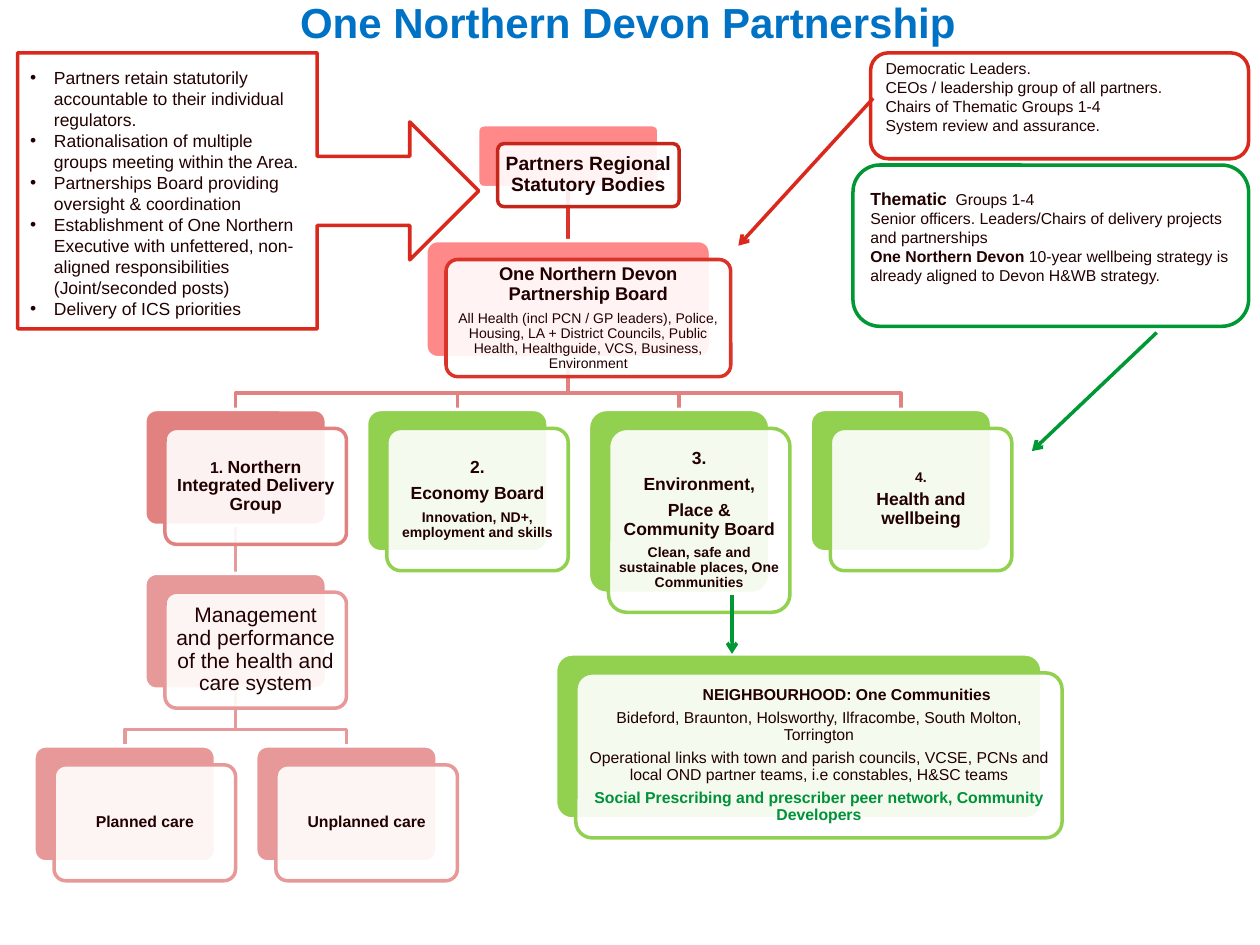
from dataclasses import dataclass

import pptx
import pptx.dml.color
import pptx.enum.shapes
import pptx.enum.text
import pptx.oxml
import pptx.oxml.ns
import pptx.util

Inches = pptx.util.Inches
Pt = pptx.util.Pt
RGBColor = pptx.dml.color.RGBColor
MSO_SHAPE = pptx.enum.shapes.MSO_SHAPE
PP_ALIGN = pptx.enum.text.PP_ALIGN
MSO_ANCHOR = pptx.enum.text.MSO_ANCHOR

INK = RGBColor(0x23, 0x00, 0x00)
WHITE = RGBColor(0xFF, 0xFF, 0xFF)
TITLE_BLUE = RGBColor(0x00, 0x72, 0xC6)
RED = RGBColor(0xDA, 0x29, 0x1C)
DEEP_RED = RGBColor(0xC6, 0x25, 0x19)
BOARD_RED = RGBColor(0xDA, 0x33, 0x2A)
PINK = RGBColor(0xFF, 0x88, 0x88)
ROSE = RGBColor(0xE2, 0x82, 0x80)
PALE_ROSE = RGBColor(0xE6, 0x99, 0x98)
LIME = RGBColor(0x92, 0xD0, 0x50)
GREEN = RGBColor(0x00, 0x98, 0x34)
TEXT_GREEN = RGBColor(0x00, 0x91, 0x39)

CARD_OFFSET = 0.16
CARD_WIDTH = 1.44
COLUMN_STEP = 1.76


@dataclass
class Line:
    """One paragraph, with an optional bold lead run."""
    text: str
    size: float
    bold: bool = False
    color: RGBColor = INK
    lead: str = ""
    lead_size: float = 9
    margin: float = 0


def add_xml(parent, tag, **attributes):
    """Append a drawing element to a parent and return it."""
    child = pptx.oxml.parse_xml(f"<a:{tag} {pptx.oxml.ns.nsdecls('a')}/>")
    for name, value in attributes.items():
        child.set(name, value)
    parent.append(child)
    return child


def write_lines(frame, lines, align=PP_ALIGN.LEFT, compact=False, bullet=None):
    """Fill a text frame with paragraphs."""
    frame.word_wrap = True
    for number, line in enumerate(lines):
        para = frame.add_paragraph() if number else frame.paragraphs[0]
        para.alignment = align
        para.font.name, para.font.size = "Arial", Pt(line.size)
        para.font.bold, para.font.color.rgb = line.bold, line.color
        if line.lead:
            span = para.add_run()
            span.text = line.lead
            span.font.size, span.font.bold = Pt(line.lead_size), True
        para.add_run().text = line.text
        properties = para._p.get_or_add_pPr()
        if compact:
            para.line_spacing = 0.9
            para.space_after = Pt(round(line.size * 0.38, 1))
        if line.margin:
            properties.set("marL", str(Inches(line.margin)))
        if bullet:
            properties.set("marL", str(Inches(0.19)))
            properties.set("indent", str(-Inches(0.19)))
            defaults = properties.find(pptx.oxml.ns.qn("a:defRPr"))
            defaults.addprevious(add_xml(properties, "buFont", typeface="Arial"))
            defaults.addprevious(add_xml(properties, "buChar", char=bullet))


def add_panel(page, kind, box, line_color, fill=None):
    """Add an outlined preset shape, filled or hollow."""
    shape = page.shapes.add_shape(kind, *map(Inches, box))
    shape.shadow.inherit = False
    if fill is None:
        shape.fill.background()
    else:
        shape.fill.solid()
        shape.fill.fore_color.rgb = fill
    shape.line.color.rgb, shape.line.width = line_color, Pt(2)
    return shape


def add_text(page, box, lines, **options):
    """Add a wrapped text box."""
    frame = page.shapes.add_textbox(*map(Inches, box)).text_frame
    write_lines(frame, lines, **options)


def add_card(page, box, fill, lines, inset=0.04, edge=None):
    """Add a coloured card with an offset translucent text card; return the coloured one."""
    left, top, width, height = box
    back = add_panel(page, MSO_SHAPE.ROUNDED_RECTANGLE, box, WHITE, fill)
    front_box = (left + CARD_OFFSET, top + 0.15, width, height)
    front = add_panel(page, MSO_SHAPE.ROUNDED_RECTANGLE, front_box, edge or fill, WHITE)
    for shape in (back, front):
        shape.adjustments[0] = 0.1
    add_xml(front._element.spPr.find(".//" + pptx.oxml.ns.qn("a:srgbClr")), "alpha", val="90000")
    frame = front.text_frame
    frame.vertical_anchor = MSO_ANCHOR.MIDDLE
    frame.margin_left = frame.margin_right = Inches(inset)
    frame.margin_top = frame.margin_bottom = Inches(inset)
    write_lines(frame, lines, align=PP_ALIGN.CENTER, compact=True)
    return back


def add_straight(page, start, end, color):
    """Add a straight connector without a shadow."""
    link = page.shapes.add_connector(
        pptx.enum.shapes.MSO_CONNECTOR.STRAIGHT, *map(Inches, start + end))
    link.line.color.rgb, link.line.width = color, Pt(2)
    add_xml(link._element.spPr, "effectLst")
    return link


def add_arrow(page, start, end, color):
    """Add a straight line with an open arrowhead at its end."""
    link = add_straight(page, start, end, color)
    add_xml(link.line._get_or_add_ln(), "tailEnd", type="arrow")


def link_cards(page, parent, child, color):
    """Join a parent card's bottom to a child card's top, behind all cards."""
    start_x, end_x = (card.left + card.width // 2 for card in (parent, child))
    start_y, end_y = parent.top + parent.height, child.top
    if abs(start_x - end_x) < Inches(0.01):
        link = add_straight(page, (0, 0), (1, 1), color)
        link.begin_connect(parent, 2)
        link.end_connect(child, 0)
    else:
        bend_y = end_y - Inches(0.13)
        builder = page.shapes.build_freeform(start_x, start_y)
        builder.add_line_segments(
            [(start_x, bend_y), (end_x, bend_y), (end_x, end_y)], close=False)
        link = builder.convert_to_shape()
        link.shadow.inherit = False
        link.fill.background()
        link.line.color.rgb, link.line.width = color, Pt(2)
    page.shapes._spTree.insert(2, link._element)


def add_title(page, box):
    """Place and format the slide title."""
    title = page.shapes.title
    title.left, title.top, title.width, title.height = map(Inches, box)
    title.text_frame.vertical_anchor = MSO_ANCHOR.TOP
    write_lines(title.text_frame, [Line("One Northern Devon Partnership ", 24, True, TITLE_BLUE)],
                align=PP_ALIGN.CENTER)


def add_structure(page, box):
    """Draw the organisation chart from the box's top left corner."""
    left, top, width, height = box
    columns = [left + 0.88 + COLUMN_STEP * number for number in range(4)]
    row = top + 2.26
    bodies = add_card(page, (left + 3.52, top, CARD_WIDTH, 0.5), PINK,
                      [Line("Partners Regional Statutory Bodies", 11, True)], 0.03, DEEP_RED)
    board = add_card(page, (left + 3.11, top + 0.92, 2.26, 0.93), PINK, [
        Line("One Northern Devon Partnership Board", 10.5, True),
        Line("All Health (incl PCN / GP leaders), Police, Housing, LA + District Councils, "
             "Public Health, Healthguide, VCS, Business, Environment", 8)], 0.05, BOARD_RED)
    groups = [
        (0.92, ROSE, [Line("Northern Integrated Delivery Group", 10, True, lead="1. ")]),
        (1.13, LIME, [Line("2.", 10, True), Line("Economy Board", 10, True),
                      Line("Innovation, ND+, employment and skills", 8, True)]),
        (1.46, LIME, [Line("3.", 10, True), Line("Environment,", 10, True),
                      Line("Place & Community Board", 10, True),
                      Line("Clean, safe and sustainable places, One Communities", 8, True)]),
        (1.13, LIME, [Line("4.", 8, True), Line("Health and wellbeing", 10, True)]),
    ]
    cards = [add_card(page, (column, row, CARD_WIDTH, tall), fill, lines)
             for column, (tall, fill, lines) in zip(columns, groups)]
    management = add_card(page, (columns[0], top + 3.56, CARD_WIDTH, 0.92), PALE_ROSE, [
        Line("Management and performance of the health and care system", 12)], 0.05)
    care = [add_card(page, (left + COLUMN_STEP * number, top + 4.93, CARD_WIDTH, 0.92),
                     PALE_ROSE, [Line(name, 9, True)])
            for number, name in enumerate(("Planned care", "Unplanned care"))]
    add_card(page, (left + 4.14, top + 4.2, 3.86, 1.31), LIME, [
        Line("NEIGHBOURHOOD: One Communities", 9, True, margin=0.44),
        Line("Bideford, Braunton, Holsworthy, Ilfracombe, South Molton, Torrington", 9),
        Line("Operational links with town and parish councils, VCSE, PCNs and local OND "
             "partner teams, i.e constables, H&SC teams", 9),
        Line("Social Prescribing and prescriber peer network, Community Developers",
             9, True, TEXT_GREEN)])
    link_cards(page, bodies, board, BOARD_RED)
    for card in cards:
        link_cards(page, board, card, ROSE)
    link_cards(page, cards[0], management, PALE_ROSE)
    for card in care:
        link_cards(page, management, card, PALE_ROSE)
    add_arrow(page, (left + 5.54, top + 3.73), (left + 5.54, top + 4.2), GREEN)


def add_leaders(page, box):
    """Add the leaders panel and its arrow to the board."""
    left, top, width, height = box
    add_panel(page, MSO_SHAPE.ROUNDED_RECTANGLE, box, RED)
    add_text(page, (left + 0.02, top, width - 0.02, 0.71), [Line(text, 9) for text in (
        "Democratic Leaders.", "CEOs / leadership group of all partners.",
        "Chairs of Thematic Groups 1-4", "System review and assurance.")])
    add_arrow(page, (left + 0.02, top + 0.36), (left - 1.05, top + 1.53), RED)


def add_thematic(page, box):
    """Add the thematic groups panel and its arrow to the groups."""
    left, top, width, height = box
    add_panel(page, MSO_SHAPE.ROUNDED_RECTANGLE, box, GREEN)
    add_text(page, (left + 0.04, top + 0.13, width, 1.03), [
        Line("  Groups 1-4", 9, lead="Thematic", lead_size=10),
        Line("Senior officers. Leaders/Chairs of delivery projects and partnerships", 9),
        Line(" 10-year wellbeing strategy is already aligned to Devon H&WB strategy.", 9,
             lead="One Northern Devon")])
    add_arrow(page, (left + 2.41, top + 1.33), (left + 1.42, top + 2.27), GREEN)


def add_principles(page, box):
    """Add the callout that points right, with its bulleted principles."""
    left, top, width, height = box
    shift = (width - height) / 2
    callout = add_panel(page, MSO_SHAPE.DOWN_ARROW_CALLOUT,
                        (left + shift, top - shift, height, width), RED, WHITE)
    callout.rotation = 270
    add_text(page, (left, top + 0.06, 2.34, 2.12), [Line(text, 10) for text in (
        "Partners retain statutorily accountable to their individual regulators.",
        "Rationalisation of multiple groups meeting within the Area.",
        "Partnerships Board providing oversight & coordination",
        "Establishment of One Northern Executive with unfettered, non-aligned "
        "responsibilities (Joint/seconded posts)",
        "Delivery of ICS priorities")], bullet="•")


def main():
    """Build and save the one-slide deck."""
    deck = pptx.Presentation()
    deck.slide_width, deck.slide_height = Inches(10), Inches(7.5)
    page = deck.slides.add_slide(deck.slide_layouts[5])
    add_title(page, (0.65, -0.08, 8.76, 0.5))
    add_structure(page, (0.27, 0.99, 8.16, 6))
    add_leaders(page, (6.91, 0.42, 3, 0.84))
    add_thematic(page, (6.77, 1.31, 3.14, 1.28))
    add_principles(page, (0.14, 0.42, 3.66, 2.19))
    deck.save("out.pptx")


if __name__ == "__main__":
    main()
